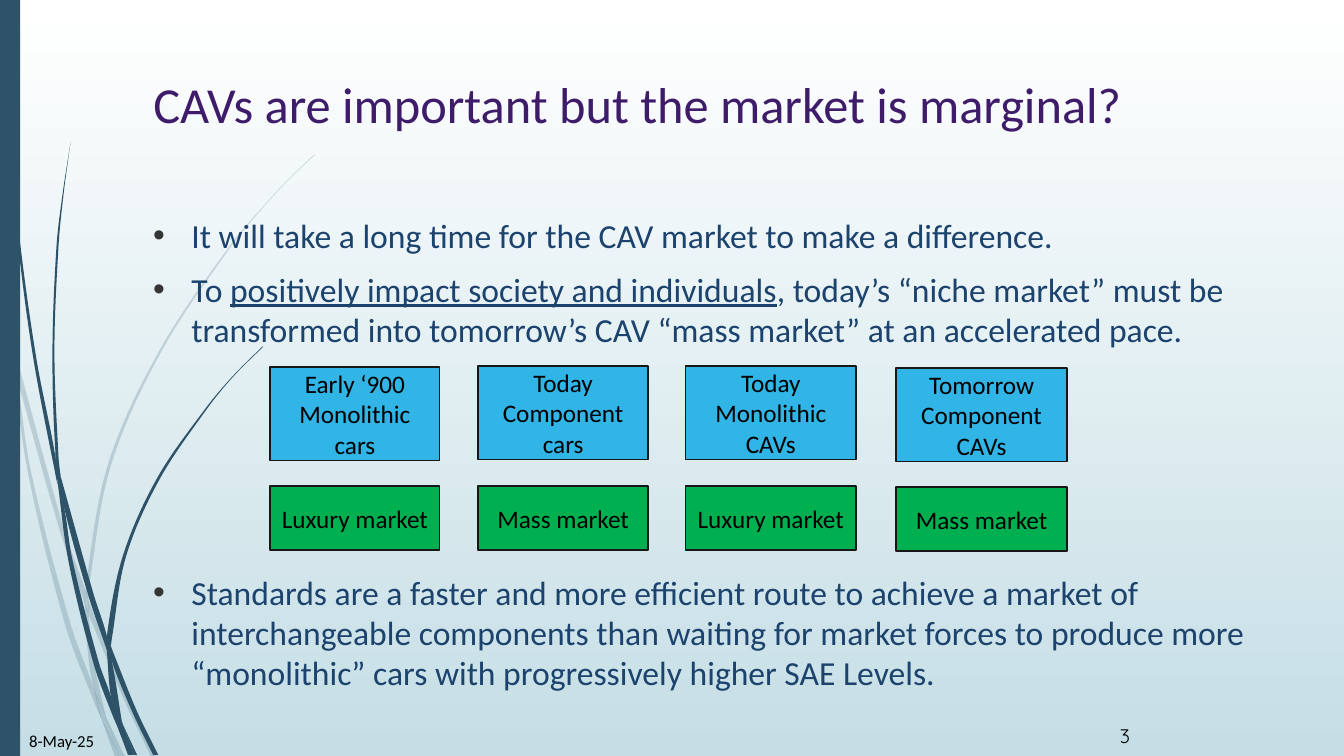
from dataclasses import dataclass
import math

import lxml.etree
import pptx
import pptx.dml.color
import pptx.enum.shapes
import pptx.enum.text
import pptx.oxml.ns
import pptx.util

Inches = pptx.util.Inches
qn = pptx.oxml.ns.qn
Point = tuple[float, float]
Rgb = pptx.dml.color.RGBColor.from_string


@dataclass(frozen=True)
class Theme:
    sky: str = "FFFFFF"
    horizon: str = "C5DEE5"
    grass: str = "2E5369"
    title: str = "3F1C6A"
    body: str = "1C436D"
    bullet: str = "353535"
    ink: str = "000000"
    outline: str = "171717"
    product: str = "31B4E6"
    market: str = "00B050"
    font: str = "Calibri"
    number_font: str = "Quicksand"
    title_size: int = 36
    body_size: int = 24
    box_size: int = 18
    number_size: int = 14
    date_size: int = 12


@dataclass(frozen=True)
class Era:
    left: float
    width: float
    product_top: float
    market_top: float
    product: tuple[str, ...]
    market: str


@dataclass(frozen=True)
class Blade:
    """A piece of grass between two curved edges."""
    near: tuple[Point, ...]
    far: tuple[Point, ...]


THEME = Theme()
ERAS = (
    Era(2.68, 1.68, 3.64, 4.82, ("Early ‘900", "Monolithic cars"), "Luxury market"),
    Era(4.74, 1.69, 3.63, 4.82, ("Today Component cars",), "Mass market"),
    Era(6.8, 1.69, 3.63, 4.82, ("Today Monolithic CAVs",), "Luxury market"),
    Era(8.89, 1.69, 3.65, 4.83, ("Tomorrow Component CAVs",), "Mass market"),
)
PALE_GRASS = (
    Blade(((0, 2.82), (.09, 3.22), (.11, 3.5)), ((0, 2.99), (.1, 3.44), (.11, 3.5))),
    Blade(((.14, 3.45), (.62, 5.2), (.85, 5.86)), ((.17, 3.76), (.58, 5.22), (.84, 5.99))),
    Blade(((.88, 5.96), (.92, 6.07), (1.27, 6.92), (1.55, 7.51)),
          ((.88, 6.1), (1.23, 6.94), (1.5, 7.51))),
    Blade(((1.05, 7.11), (1.24, 7.51)), ((1.05, 7.11), (1.19, 7.51))),
    Blade(((.11, 3.5), (.17, 3.76), (.31, 4.69), (.7, 6.19), (.93, 6.83), (1.01, 7.14)),
          ((.11, 3.5), (.28, 4.7), (.65, 6.21), (.92, 6.93), (1.01, 7.14))),
    Blade(((.84, 5.99), (.88, 6.1), (.91, 6.46), (1.05, 7.11)),
          ((.84, 5.99), (.87, 6.46), (.93, 6.83), (1.05, 7.11))),
    Blade(((3.12, 1.53), (2.89, 1.75), (2.68, 1.97), (2.28, 2.44), (1.58, 3.48),
           (1.07, 4.61), (.85, 5.84), (.88, 5.96)),
          ((3.12, 1.54), (2.9, 1.75), (2.68, 1.98), (2.29, 2.45), (1.6, 3.49),
           (1.1, 4.62), (.88, 5.84), (.88, 5.96))),
    Blade(((1.01, 7.14), (1.19, 7.51)), ((1.01, 7.14), (1.14, 7.51))),
    Blade(((.85, 5.86), (.88, 5.96), (.88, 6.1)), ((.85, 5.86), (.84, 5.99), (.88, 6.1))),
    Blade(((.93, 6.83), (1.05, 7.11), (1.19, 7.51)), ((.93, 6.83), (1.01, 7.14), (1.19, 7.51))),
)
DARK_GRASS = (
    Blade(((.03, 0), (.04, .48), (.07, 1.1), (.17, 2.33), (.33, 3.55), (.57, 4.81)),
          ((.04, 0), (.05, .48), (.08, 1.09), (.19, 2.32), (.36, 3.55), (.55, 4.53), (.57, 4.81))),
    Blade(((.6, 4.72), (.93, 5.9), (1.06, 6.31), (1.06, 6.45)),
          ((.6, 4.72), (.64, 5.05), (.88, 5.92), (1.06, 6.45))),
    Blade(((1.1, 6.41), (1.13, 6.49), (1.36, 7.06), (1.57, 7.49)),
          ((1.1, 6.41), (1.11, 6.56), (1.32, 7.08), (1.52, 7.49))),
    Blade(((.57, 4.77), (.64, 5.05), (.72, 5.56), (.98, 6.57), (1.1, 6.91), (1.17, 7.22)),
          ((.57, 4.77), (.68, 5.57), (.93, 6.59), (1.11, 7.08), (1.17, 7.22))),
    Blade(((.7, 1.41), (.62, 1.93), (.56, 2.45), (.52, 3.49), (.55, 4.49), (.6, 4.72)),
          ((.7, 1.41), (.63, 1.93), (.58, 2.45), (.54, 3.49), (.58, 4.53), (.6, 4.72))),
    Blade(((1.22, 7.19), (1.36, 7.49)), ((1.22, 7.19), (1.33, 7.49))),
    Blade(((.55, 4.49), (.6, 4.72), (.64, 5.05)), ((.55, 4.53), (.57, 4.77), (.64, 5.05))),
    Blade(((2.6, 3.44), (2.31, 3.73), (2.04, 4.05), (1.56, 4.74), (1.22, 5.51),
           (1.06, 6.31), (1.1, 6.41)),
          ((2.61, 3.44), (2.31, 3.74), (2.05, 4.06), (1.58, 4.76), (1.25, 5.52),
           (1.11, 6.33), (1.1, 6.41))),
    Blade(((1.17, 7.22), (1.31, 7.49)), ((1.17, 7.22), (1.27, 7.49))),
    Blade(((1.06, 6.45), (1.11, 6.56), (1.21, 7.16), (1.22, 7.19)),
          ((1.06, 6.45), (1.1, 6.91), (1.16, 7.06), (1.22, 7.19))),
    Blade(((1.06, 6.31), (1.1, 6.41), (1.11, 6.56)), ((1.06, 6.31), (1.06, 6.45), (1.11, 6.56))),
    Blade(((1.1, 6.91), (1.22, 7.19), (1.33, 7.49)), ((1.1, 6.91), (1.17, 7.22), (1.3, 7.49))),
)


def apply(target, **values) -> None:
    for attribute, value in values.items():
        setattr(target, attribute, value)


def paint(shape, fill: str, opacity: int = 100) -> None:
    shape.shadow.inherit = False
    shape.fill.solid()
    shape.fill.fore_color.rgb = Rgb(fill)
    shape.line.fill.background()
    if opacity < 100:
        color = shape._element.spPr.find(".//" + qn("a:srgbClr"))
        lxml.etree.SubElement(color, qn("a:alpha"), val=str(opacity * 1000))


def write(paragraph, text: str, size: int, color: str, font: str = THEME.font) -> pptx.text.text._Run:
    run = paragraph.add_run()
    run.text = text
    apply(run.font, name=font, size=pptx.util.Pt(size))
    run.font.color.rgb = Rgb(color)
    return run


def add_text_frame(slide, left: float, top: float, width: float, height: float):
    frame = slide.shapes.add_textbox(*map(Inches, (left, top, width, height))).text_frame
    frame.word_wrap = True
    return frame


def add_bullets(slide, top: float, height: float, points: tuple[tuple[str, ...], ...]) -> None:
    """Each point is a tuple of runs; every second run is underlined."""
    frame = add_text_frame(slide, 1.42, top, 11.16, height)
    for row, point in enumerate(points):
        paragraph = frame.add_paragraph() if row else frame.paragraphs[0]
        properties = paragraph._p.get_or_add_pPr()
        properties.set("marL", str(Inches(.38)))
        properties.set("indent", str(Inches(-.38)))
        color = lxml.etree.SubElement(properties, qn("a:buClr"))
        lxml.etree.SubElement(color, qn("a:srgbClr"), val=THEME.bullet)
        lxml.etree.SubElement(properties, qn("a:buFont"), typeface="Arial")
        lxml.etree.SubElement(properties, qn("a:buChar"), char="•")
        if row:
            paragraph.space_before = pptx.util.Pt(10)
        for part, text in enumerate(point):
            run = write(paragraph, text, THEME.body_size, THEME.body)
            if part % 2:
                run.font.underline = True


def curve(points: tuple[Point, ...]) -> list[Point]:
    """Two control points and an end point for each step along a smooth edge."""
    padded = (points[0], *points, points[-1])
    result = []
    for a, b, c, d in zip(padded, padded[1:], padded[2:], padded[3:]):
        before, length, after = math.dist(a, b), math.dist(b, c), math.dist(c, d)
        leave, arrive = length / 3 / (before + length), length / 3 / (length + after)
        result += [tuple(q + (r - p) * leave for p, q, r in zip(a, b, c)),
                   tuple(r - (s - q) * arrive for q, r, s in zip(b, c, d)), c]
    return result


def add_blade(slide, blade: Blade, opacity: int) -> None:
    back = blade.far[::-1]
    tip = curve((blade.near[-1], back[0])) if blade.near[-1] != back[0] else []
    steps = curve(blade.near) + tip + curve(back)
    builder = slide.shapes.build_freeform(*map(Inches, blade.near[0]))
    builder.add_line_segments([(Inches(x), Inches(y)) for x, y in steps], close=True)
    grass = builder.convert_to_shape()
    paint(grass, THEME.grass, opacity)
    # Join every three line steps into one curve
    lines = grass._element.findall(".//" + qn("a:lnTo"))
    for first, second, third in zip(lines[::3], lines[1::3], lines[2::3]):
        first.tag = qn("a:cubicBezTo")
        for line in (second, third):
            first.append(line[0])
            line.getparent().remove(line)


def add_rectangle(slide, left: float, top: float, width: float, height: float, fill: str):
    rectangle = slide.shapes.add_shape(pptx.enum.shapes.MSO_SHAPE.RECTANGLE,
                                       *map(Inches, (left, top, width, height)))
    paint(rectangle, fill)
    return rectangle


def add_box(slide, left: float, top: float, width: float, height: float, fill: str,
            lines: tuple[str, ...]) -> None:
    box = add_rectangle(slide, left, top, width, height, fill)
    box.line.color.rgb = Rgb(THEME.outline)
    box.line.width = pptx.util.Pt(1.25)
    apply(box.text_frame, word_wrap=True, vertical_anchor=pptx.enum.text.MSO_ANCHOR.MIDDLE)
    for row, line in enumerate(lines):
        paragraph = box.text_frame.add_paragraph() if row else box.text_frame.paragraphs[0]
        paragraph.alignment = pptx.enum.text.PP_ALIGN.CENTER
        write(paragraph, line, THEME.box_size, THEME.ink)


def main() -> None:
    deck = pptx.Presentation()
    apply(deck, slide_width=Inches(13.33), slide_height=Inches(7.5))
    slide = deck.slides.add_slide(deck.slide_layouts[5])

    # Background and grass
    background = slide.background.fill
    background.gradient()
    background.gradient_angle = 270
    for stop, color, position in zip(background.gradient_stops, (THEME.sky, THEME.horizon), (0, 1)):
        stop.color.rgb = Rgb(color)
        stop.position = position
    for blades, opacity in ((PALE_GRASS, 20), (DARK_GRASS, 100)):
        for blade in blades:
            add_blade(slide, blade, opacity)
    add_rectangle(slide, 0, 0, .2, 7.5, THEME.grass)

    # Title
    title = slide.shapes.title
    apply(title, left=Inches(1.42), top=Inches(.68), width=Inches(11.16), height=Inches(1.4))
    apply(title.text_frame, word_wrap=True, vertical_anchor=pptx.enum.text.MSO_ANCHOR.TOP,
          auto_size=pptx.enum.text.MSO_AUTO_SIZE.NONE)
    heading = title.text_frame.paragraphs[0]
    heading.alignment = pptx.enum.text.PP_ALIGN.LEFT
    write(heading, "CAVs are important but the market is marginal?", THEME.title_size, THEME.title)

    # Bullets
    add_bullets(slide, 2.08, 1.56, (
        ("It will take a long time for the CAV market to make a difference.",),
        ("To ", "positively impact society and individuals",
         ", today’s “niche market” must be transformed into tomorrow’s CAV “mass market” "
         "at an accelerated pace.")))
    add_bullets(slide, 5.62, 1.39, ((
        "Standards are a faster and more efficient route to achieve a market of interchangeable "
        "components than waiting for market forces to produce more “monolithic” cars with "
        "progressively higher SAE Levels.",),))

    # Products and their markets
    for era in ERAS:
        add_box(slide, era.left, era.product_top, era.width, .93, THEME.product, era.product)
        add_box(slide, era.left, era.market_top, era.width, .64, THEME.market, (era.market,))

    # Date and slide number
    for left, top, width, height, text, size, font in (
            (.19, 7.2, 1.09, .4, "8-May-25", THEME.date_size, THEME.font),
            (11.01, 7.18, .61, .05, "3", THEME.number_size, THEME.number_font)):
        frame = add_text_frame(slide, left, top, width, height)
        write(frame.paragraphs[0], text, size, THEME.ink, font)

    deck.save("out.pptx")


if __name__ == "__main__":
    main()
